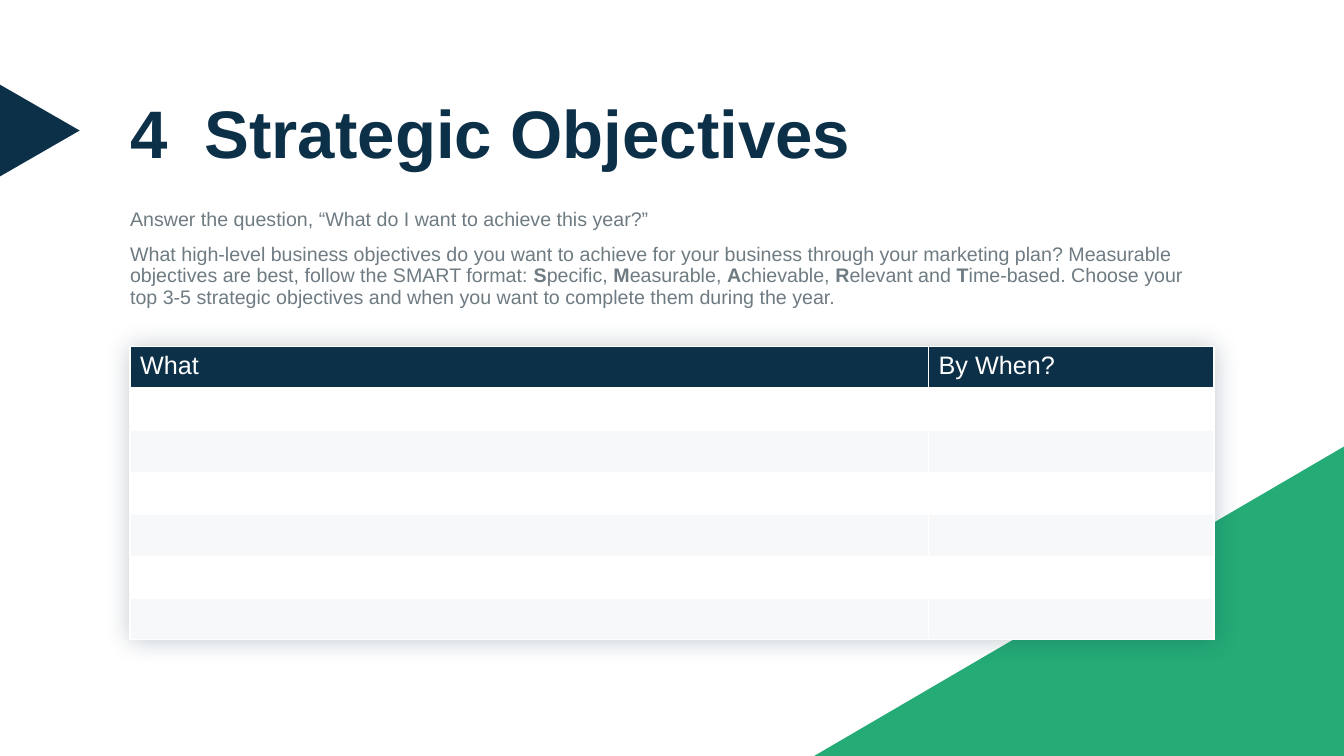
from dataclasses import dataclass

from lxml import etree
from pptx import Presentation
from pptx.dml.color import RGBColor
from pptx.enum.shapes import MSO_SHAPE
from pptx.enum.text import MSO_ANCHOR, MSO_AUTO_SIZE, PP_ALIGN
from pptx.oxml.ns import qn
from pptx.util import Inches, Pt

TRIANGLE = MSO_SHAPE.ISOSCELES_TRIANGLE
RIGHT_TRIANGLE = MSO_SHAPE.RIGHT_TRIANGLE
TOP = MSO_ANCHOR.TOP
LEFT = PP_ALIGN.LEFT
NO_AUTOFIT = MSO_AUTO_SIZE.NONE
TITLE_ONLY = 5


@dataclass(frozen=True)
class Theme:
    font: str = "Arial"
    navy: str = "0D3049"
    green: str = "24AB76"
    grey: str = "6E7B82"
    white: str = "FFFFFF"
    band: str = "F6F8FA"
    title_size: int = 48
    body_size: int = 14
    table_size: int = 18


THEME = Theme()
MARGIN, CONTENT_WIDTH = 1.29, 10.75

QUESTION = "Answer the question, “What do I want to achieve this year?”"
# Spans alternate between regular and bold
GUIDANCE = [
    "What high-level business objectives do you want to achieve for your business "
    "through your marketing plan? Measurable objectives are best, follow the SMART format: ",
    "S", "pecific, ", "M", "easurable, ", "A", "chievable, ", "R", "elevant and ", "T",
    "ime-based. Choose your top 3-5 strategic objectives and when you want to "
    "complete them during the year.",
]
HEADERS = ["What", "By When?"]
COLUMN_WIDTHS = [7.92, 2.83]
ROW_COUNT, TABLE_HEIGHT = 7, 2.91


def color(value):
    return RGBColor.from_string(value)


def add_triangle(page, kind, left, top, width, height, fill):
    shape = page.shapes.add_shape(
        kind, Inches(left), Inches(top), Inches(width), Inches(height))
    shape.shadow.inherit = False
    shape.fill.solid()
    shape.fill.fore_color.rgb = color(fill)
    shape.line.fill.background()
    return shape


def prepare_frame(frame):
    frame.margin_left = frame.margin_right = Inches(0)
    frame.margin_top = frame.margin_bottom = Inches(0)
    frame.word_wrap = True
    frame.auto_size = NO_AUTOFIT
    frame.vertical_anchor = TOP


def write_paragraph(para, spans, size, ink, bold=None, before=0):
    para.alignment = LEFT
    para.line_spacing = 0.9
    para.space_before = Pt(before)
    set_font(para, size, ink)
    para.font.bold = bold
    for index, text in enumerate(spans):
        span = para.add_run()
        span.text = text
        if index % 2:
            span.font.bold = True


def set_font(para, size, ink):
    para.font.name = THEME.font
    para.font.size = Pt(size)
    para.font.color.rgb = color(ink)


def add_title(page, text):
    title = page.shapes.title
    title.left, title.top = Inches(MARGIN), Inches(1)
    title.width, title.height = Inches(CONTENT_WIDTH), Inches(0.75)
    prepare_frame(title.text_frame)
    write_paragraph(title.text_frame.paragraphs[0], [text],
                    THEME.title_size, THEME.navy, bold=True)


def add_introduction(page):
    box = page.shapes.add_textbox(
        Inches(MARGIN), Inches(2.08), Inches(CONTENT_WIDTH), Inches(0.99))
    frame = box.text_frame
    prepare_frame(frame)
    write_paragraph(frame.paragraphs[0], [QUESTION], THEME.body_size, THEME.grey)
    write_paragraph(frame.add_paragraph(), GUIDANCE, THEME.body_size, THEME.grey, before=10)


def add_solid_color(parent, value):
    fill = etree.SubElement(parent, qn("a:solidFill"))
    etree.SubElement(fill, qn("a:srgbClr"), val=value)


def set_borders(cell, widths):
    properties = cell._tc.get_or_add_tcPr()
    for side, width in widths.items():
        line = etree.SubElement(properties, qn(f"a:ln{side}"), w=str(Pt(width)))
        add_solid_color(line, THEME.white)


def add_table_shadow(table):
    effects = etree.SubElement(table._tbl.tblPr, qn("a:effectLst"))
    # Effects come before the table style reference
    table._tbl.tblPr.insert(0, effects)
    shadow = etree.SubElement(effects, qn("a:outerShdw"), blurRad=str(Inches(0.25)),
                              dist="0", algn="ctr", rotWithShape="0")
    tint = etree.SubElement(shadow, qn("a:srgbClr"), val=THEME.navy)
    etree.SubElement(tint, qn("a:alpha"), val="25000")


def add_objectives_table(page):
    table = page.shapes.add_table(
        ROW_COUNT, len(HEADERS), Inches(MARGIN), Inches(3.44),
        Inches(CONTENT_WIDTH), Inches(TABLE_HEIGHT)).table
    add_table_shadow(table)
    for column, width in zip(table.columns, COLUMN_WIDTHS):
        column.width = Inches(width)
    for row_index, row in enumerate(table.rows):
        row.height = Inches(TABLE_HEIGHT / ROW_COUNT)
        is_header = row_index == 0
        fill = THEME.navy if is_header else (THEME.band, THEME.white)[row_index % 2]
        for cell, header in zip(row.cells, HEADERS):
            set_borders(cell, {
                "L": 1, "R": 1,
                "T": 3 if row_index == 1 else 1,
                "B": 3 if is_header else 1,
            })
            cell.fill.solid()
            cell.fill.fore_color.rgb = color(fill)
            if is_header:
                cell.text = header
            set_font(cell.text_frame.paragraphs[0], THEME.table_size,
                     THEME.white if is_header else THEME.navy)
            cell.text_frame.paragraphs[0].font.bold = False


def main():
    deck = Presentation()
    deck.slide_width, deck.slide_height = Inches(13.33), Inches(7.5)
    page = deck.slides.add_slide(deck.slide_layouts[TITLE_ONLY])

    # Corner and margin decoration
    corner = add_triangle(page, RIGHT_TRIANGLE, 8.04, 4.43, 5.29, 3.09, THEME.green)
    corner._element.spPr.get_or_add_xfrm().set("flipH", "1")
    pointer = add_triangle(page, TRIANGLE, -0.06, 0.9, 0.91, 0.79, THEME.navy)
    pointer.rotation = 90

    # Heading, guidance and the table to fill in
    add_title(page, "4  Strategic Objectives")
    add_introduction(page)
    add_objectives_table(page)

    deck.save("out.pptx")


if __name__ == "__main__":
    main()
